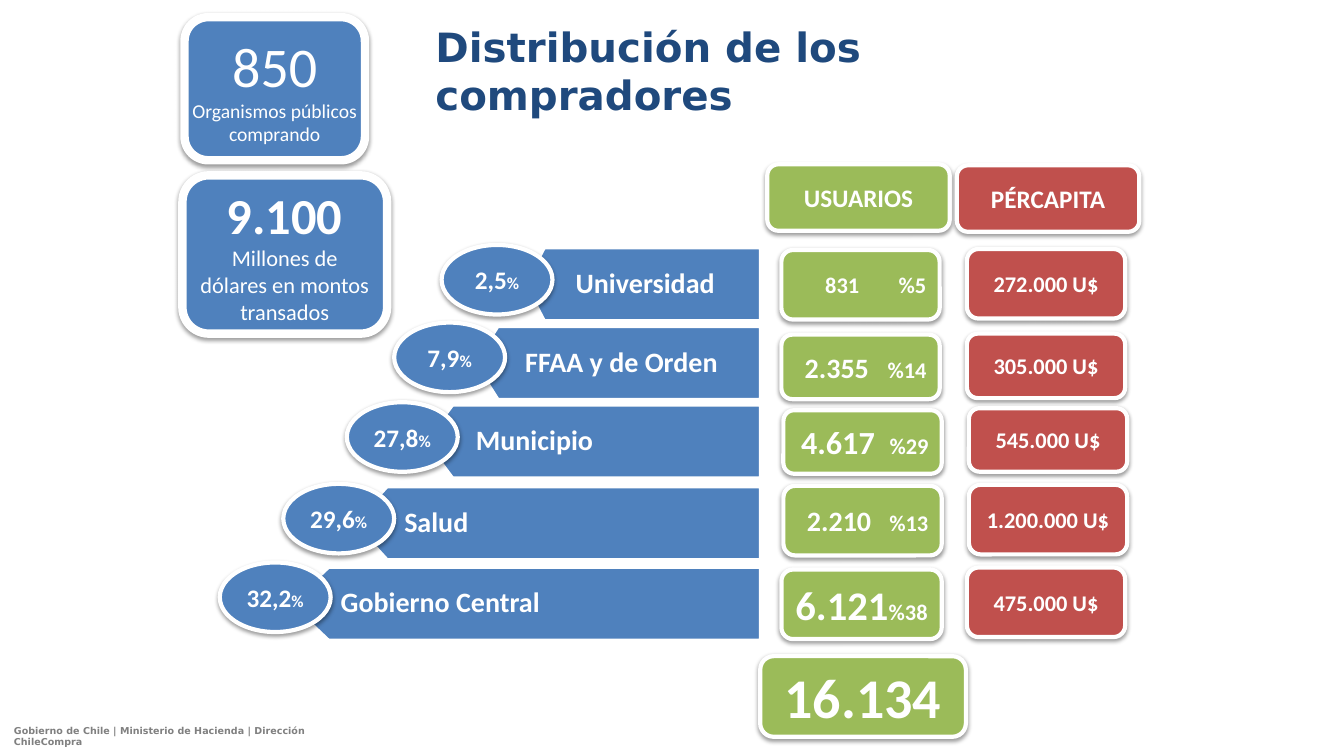
from lxml import etree
from pptx import Presentation
from pptx import util as u
from pptx.dml.color import RGBColor
from pptx.enum import shapes, text
from pptx.oxml import ns

COLORS = {
    "blue": "4F81BD",
    "green": "9BBB59",
    "red": "C0504D",
    "white": "FFFFFF",
    "navy": "1F497D",
    "gray": "808080",
    "black": "000000",
}

BAR_RIGHT = 7.54
BAR_HEIGHT = 0.72
CARD_WIDTH = 1.57
USERS_RIGHT_TAB = 1.31

BARS = [
    ("Universidad", 5.21, 5.4, 2.46),
    ("FFAA y de Orden", 4.71, 4.94, 3.24),
    ("Municipio", 4.22, 4.49, 4.02),
    ("Salud", 3.51, 3.84, 4.83),
    ("Gobierno Central", 2.88, 3.26, 5.63),
]
SHARES = [
    ("2,5", 4.38, 2.43),
    ("7,9", 3.91, 3.2),
    ("27,8", 3.44, 3.99),
    ("29,6", 2.81, 4.8),
    ("32,2", 2.18, 5.58),
]
PER_CAPITA = [
    ("272.000 U$", 9.59, 2.47, 0.69),
    ("305.000 U$", 9.59, 3.31, 0.64),
    ("545.000 U$", 9.61, 4.05, 0.63),
    ("1.200.000 U$", 9.61, 4.81, 0.69),
    ("475.000 U$", 9.59, 5.63, 0.69),
]
USERS = [
    ("831", "%5", 16, 0.64, 7.75, 2.48, 0.69),
    ("2.355", "%14", 20, 0.74, 7.75, 3.32, 0.64),
    ("4.617", "%29", 23, 0.78, 7.77, 4.07, 0.63),
    ("2.210", "%13", 20, 0.74, 7.77, 4.82, 0.69),
]


def add_run(paragraph, words, size=18, bold=True, color="white", font="Calibri"):
    run = paragraph.add_run()
    run.text = words
    run.font.size = u.Pt(size)
    run.font.bold = bold
    run.font.name = font
    run.font.color.rgb = RGBColor.from_string(COLORS[color])


class BuyersSlide:
    def __init__(self, presentation):
        self.slide = presentation.slides.add_slide(presentation.slide_layouts[6])
        self.shapes = self.slide.shapes

    def style(self, shape, fill, line_width):
        shape.shadow.inherit = False
        shape.fill.solid()
        shape.fill.fore_color.rgb = RGBColor.from_string(COLORS[fill])
        shape.line.color.rgb = RGBColor.from_string(COLORS["white"])
        shape.line.width = u.Pt(line_width)
        shape.text_frame.vertical_anchor = text.MSO_ANCHOR.MIDDLE

    def cast_shadow(self, shape):
        effects = shape.element.spPr.find(ns.qn("a:effectLst"))
        shadow = etree.SubElement(
            effects, ns.qn("a:outerShdw"), blurRad=str(u.Pt(3.1)),
            dist=str(u.Pt(1.6)), dir="5400000", rotWithShape="0")
        color = etree.SubElement(shadow, ns.qn("a:srgbClr"), val=COLORS["black"])
        etree.SubElement(color, ns.qn("a:alpha"), val="38000")

    def card(self, kind, box, fill, lines, line_width=3, wrap=False):
        shape = self.shapes.add_shape(kind, *map(u.Inches, box))
        self.style(shape, fill, line_width)
        self.cast_shadow(shape)
        frame = shape.text_frame
        frame.word_wrap = wrap
        for index, runs in enumerate(lines):
            paragraph = frame.add_paragraph() if index else frame.paragraphs[0]
            paragraph.alignment = text.PP_ALIGN.CENTER
            for words, form in runs:
                add_run(paragraph, words, **form)
        return shape

    def rounded_card(self, box, fill, lines, **options):
        kind = shapes.MSO_SHAPE.FLOWCHART_ALTERNATE_PROCESS
        return self.card(kind, box, fill, lines, **options)

    def users_card(self, box, number, percent, size, number_tab):
        lines = [[("\t" + number, {"size": size}), ("\t" + percent, {"size": 16})]]
        shape = self.rounded_card(box, "green", lines, wrap=True)
        paragraph = shape.text_frame.paragraphs[0]
        paragraph.alignment = text.PP_ALIGN.LEFT
        properties = paragraph._p.get_or_add_pPr()
        tabs = etree.SubElement(properties, ns.qn("a:tabLst"))
        for position in (number_tab, USERS_RIGHT_TAB):
            etree.SubElement(tabs, ns.qn("a:tab"),
                             pos=str(u.Inches(position)), algn="r")

    def bar(self, label, tip, shoulder, top):
        bottom = top + BAR_HEIGHT
        outline = [(shoulder, bottom), (tip, top + BAR_HEIGHT / 2),
                   (shoulder, top), (BAR_RIGHT, top)]
        builder = self.shapes.build_freeform(u.Inches(BAR_RIGHT), u.Inches(bottom))
        builder.add_line_segments(
            [(u.Inches(x), u.Inches(y)) for x, y in outline], close=True)
        shape = builder.convert_to_shape()
        self.style(shape, "blue", 2)
        frame = shape.text_frame
        frame.word_wrap = True
        frame.margin_left, frame.margin_right = u.Inches(0.5), u.Inches(0.23)
        frame.margin_top = frame.margin_bottom = u.Inches(0.13)
        paragraph = frame.paragraphs[0]
        paragraph.alignment = text.PP_ALIGN.LEFT
        paragraph.line_spacing = 0.9
        add_run(paragraph, label, size=20)

    def label(self, box, words, wrap, **form):
        shape = self.shapes.add_textbox(*map(u.Inches, box))
        shape.text_frame.word_wrap = wrap
        add_run(shape.text_frame.paragraphs[0], words, font="DejaVu Sans", **form)


def main():
    presentation = Presentation()
    presentation.slide_width = u.Inches(13.33)
    presentation.slide_height = u.Inches(7.5)
    slide = BuyersSlide(presentation)

    slide.label((0.04, 7.14, 3.77, 0.21),
                "Gobierno de Chile | Ministerio de Hacienda | Dirección ChileCompra",
                wrap=False, size=6.8, color="gray")
    caption = {"size": 14, "bold": False}
    slide.card(shapes.MSO_SHAPE.ROUNDED_RECTANGLE, (1.83, 0.17, 1.79, 1.42), "blue",
               [[("850", {"size": 40, "bold": False})],
                [("Organismos públicos", caption)],
                [("comprando", caption)]], line_width=6)
    for bar in BARS:
        slide.bar(*bar)
    for share, left, top in SHARES:
        slide.card(shapes.MSO_SHAPE.OVAL, (left, top, 1.1, 0.69), "blue",
                   [[(share, {"size": 18}), ("%", {"size": 12})]])
    for amount, left, top, height in PER_CAPITA:
        slide.rounded_card((left, top, CARD_WIDTH, height), "red",
                           [[(amount, {"size": 16})]])
    for number, percent, size, number_tab, left, top, height in USERS:
        slide.users_card((left, top, CARD_WIDTH, height),
                         number, percent, size, number_tab)
    slide.rounded_card((7.75, 5.65, 1.59, 0.69), "green",
                       [[("6.121", {"size": 29}), ("%38", {"size": 16})]])
    slide.rounded_card((7.61, 1.63, 1.81, 0.66), "green", [[("USUARIOS", {})]])
    slide.rounded_card((7.54, 6.51, 2.04, 0.8), "green",
                       [[("16.134", {"size": 40})]])
    slide.rounded_card((1.81, 1.74, 2.03, 1.57), "blue",
                       [[("9.100", {"size": 36})],
                        [("Millones de dólares en montos transados",
                          {"size": 16, "bold": False})]],
                       line_width=6, wrap=True)
    slide.rounded_card((9.49, 1.64, 1.81, 0.66), "red", [[("PÉRCAPITA", {})]])
    slide.label((4.22, 0.17, 6.07, 1.17), "Distribución de los compradores",
                wrap=True, size=28.8, color="navy")
    presentation.save("out.pptx")


if __name__ == "__main__":
    main()
